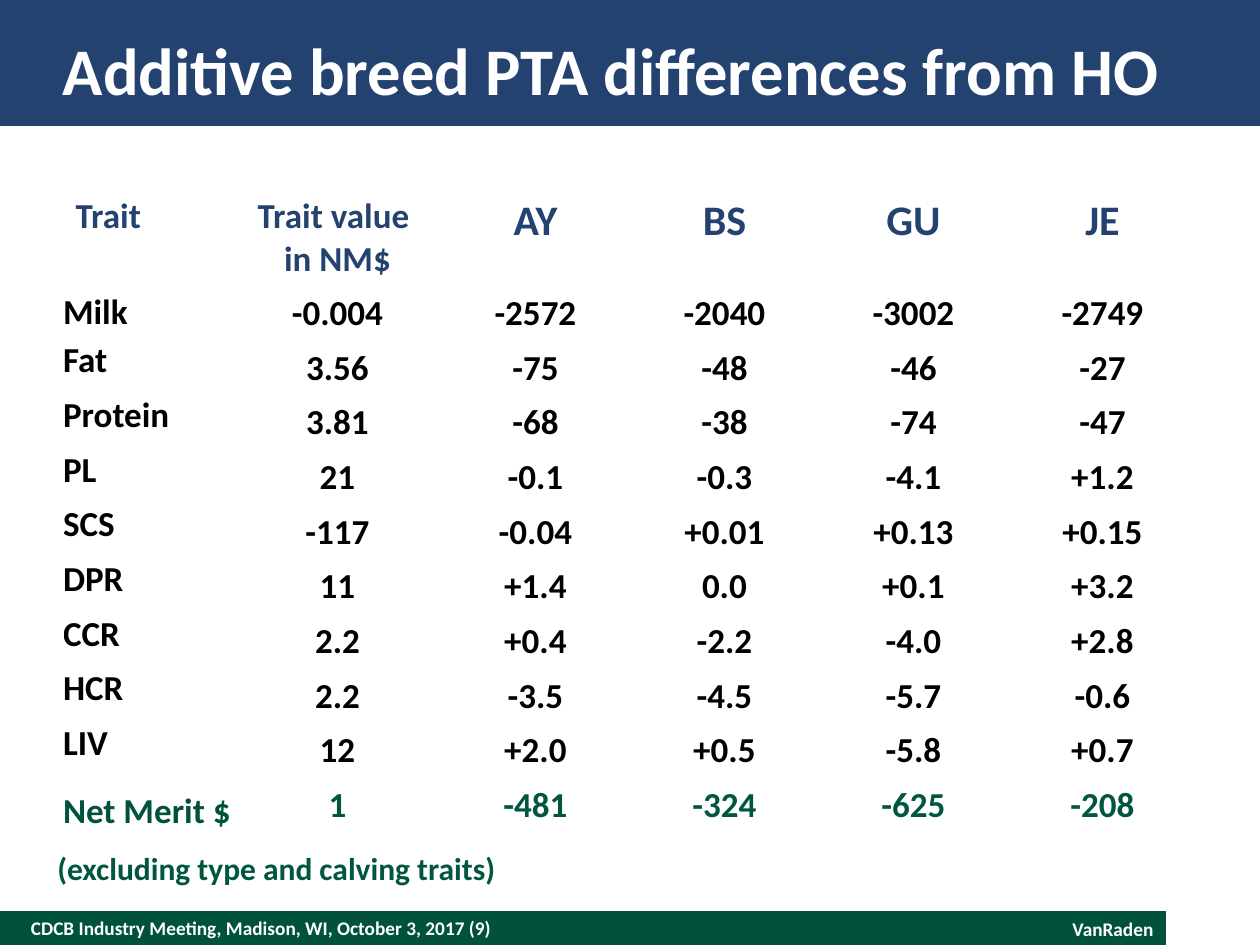
"""Build a slide comparing additive breed PTA differences from Holstein."""
from pptx import Presentation
from pptx.dml.color import RGBColor
from pptx.enum.shapes import MSO_SHAPE
from pptx.enum.text import MSO_ANCHOR, PP_ALIGN
from pptx.util import Emu, Pt

COLORS = {"navy": "244270", "forest": "00523C", "green": "00563F",
          "white": "FFFFFF", "black": "000000"}


def px(count):
    return Emu(round(count * 914400 / 126))


def write(frame, text, size, color, align=PP_ALIGN.LEFT, insets=None):
    frame.text = text
    if insets:
        (frame.margin_left, frame.margin_top,
         frame.margin_right, frame.margin_bottom) = map(px, insets)
    for paragraph in frame.paragraphs:
        paragraph.alignment = align
        for run in paragraph.runs:
            run.font.name = "Calibri"
            run.font.size = Pt(size)
            run.font.bold = True
            run.font.color.rgb = RGBColor.from_string(COLORS[color])


deck = Presentation()
deck.slide_width, deck.slide_height = px(1260), px(945)
slide = deck.slides.add_slide(deck.slide_layouts[6])

for left, top, width, height, color in [(0, 911, 1166, 34, "forest"),
                                        (0, 0, 1260, 126, "navy")]:
    band = slide.shapes.add_shape(MSO_SHAPE.RECTANGLE, px(left), px(top), px(width), px(height))
    band.shadow.inherit = False
    band.fill.solid()
    band.fill.fore_color.rgb = RGBColor.from_string(COLORS[color])
    band.line.fill.background()

FLUSH = (0, 0, 0, 0)
captions = [
    ((31, 911, 882, 34), "CDCB Industry Meeting, Madison, WI, October 3, 2017 (9)",
     11, "white", PP_ALIGN.LEFT, FLUSH, MSO_ANCHOR.MIDDLE, True),
    ((914, 911, 252, 36), "VanRaden",
     11, "white", PP_ALIGN.RIGHT, None, MSO_ANCHOR.TOP, True),
    ((63, 25, 1134, 88), "Additive breed PTA differences from HO",
     38, "white", PP_ALIGN.LEFT, FLUSH, MSO_ANCHOR.MIDDLE, True),
    ((45, 843, 467, 50), "(excluding type and calving traits)",
     18, "green", PP_ALIGN.LEFT, None, MSO_ANCHOR.TOP, False),
]
for bounds, text, size, color, align, insets, anchor, wrap in captions:
    caption = slide.shapes.add_textbox(*map(px, bounds)).text_frame
    caption.word_wrap = wrap
    caption.vertical_anchor = anchor
    write(caption, text, size, color, align, insets)

headings = ["Trait", "Trait value \nin NM$", "AY", "BS", "GU", "JE"]
traits = [
    ["Milk", "-0.004", "-2572", "-2040", "-3002", "-2749"],
    ["Fat", "3.56", "-75", "-48", "-46", "-27"],
    ["Protein", "3.81", "-68", "-38", "-74", "-47"],
    ["PL", "21", "-0.1", "-0.3", "-4.1", "+1.2"],
    ["SCS", "-117", "-0.04", "+0.01", "+0.13", "+0.15"],
    ["DPR", "11", "+1.4", "0.0", "+0.1", "+3.2"],
    ["CCR", "2.2", "+0.4", "-2.2", "-4.0", "+2.8"],
    ["HCR", "2.2", "-3.5", "-4.5", "-5.7", "-0.6"],
    ["LIV", "12", "+2.0", "+0.5", "-5.8", "+0.7"],
    ["Net Merit $", "1", "-481", "-324", "-625", "-208"],
]
label_tops = {"Milk": 6, "Net Merit $": 13}

rows = [headings] + traits
differences = slide.shapes.add_table(len(rows), len(headings), px(63), px(189),
                                     px(1134), px(52 * len(rows))).table
differences.first_row = False
differences.horz_banding = False
for column, width in zip(differences.columns, [171, 207] + [189] * 4):
    column.width = px(width)

for r, values in enumerate(rows):
    differences.rows[r].height = px(52)
    for c, value in enumerate(values):
        cell = differences.cell(r, c)
        cell.fill.background()
        is_label = r > 0 and c == 0
        size = 24 if r == 0 and c > 1 else 20
        color = "navy" if r == 0 else "black"
        if values is traits[-1]:
            color = "forest" if is_label else "green"
        align = PP_ALIGN.CENTER if c else PP_ALIGN.LEFT
        write(cell.text_frame, value, size, color, align)
        if is_label:
            cell.margin_left = cell.margin_right = cell.margin_bottom = 0
            cell.margin_top = px(label_tops.get(value, 0))
            cell.text_frame.paragraphs[0].line_spacing = Pt(24)

deck.save("out.pptx")
